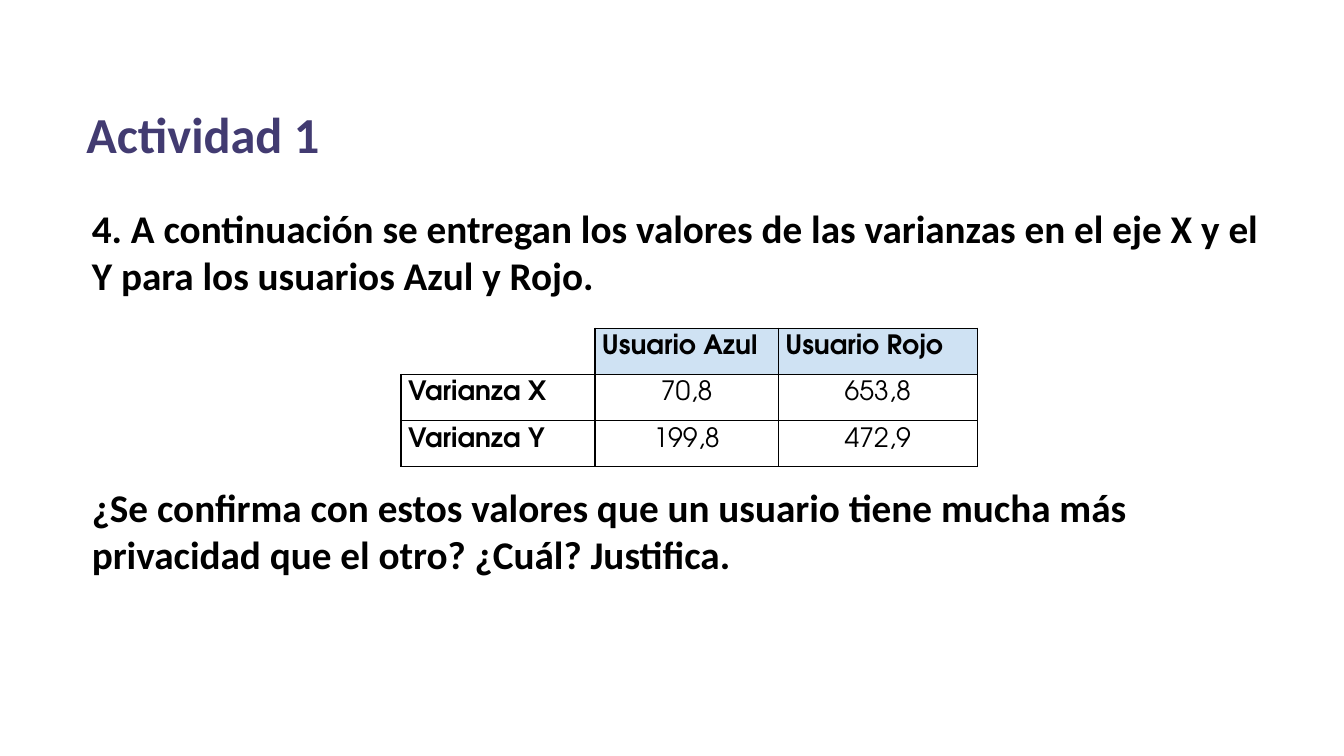
from lxml import etree
from pptx import Presentation
from pptx.dml.color import RGBColor
from pptx.enum.text import MSO_ANCHOR, PP_ALIGN
from pptx.oxml.ns import qn
from pptx.util import Pt

TOP = MSO_ANCHOR.TOP
MIDDLE = MSO_ANCHOR.MIDDLE
LEFT = PP_ALIGN.LEFT
CENTER = PP_ALIGN.CENTER
PURPLE = RGBColor(0x42, 0x3B, 0x71)
BLACK = RGBColor(0, 0, 0)
WHITE = RGBColor(255, 255, 255)
PALE_BLUE = RGBColor(0xCF, 0xE2, 0xF3)
TEXT_FONT = "Calibri"
TABLE_FONT = "TeX Gyre Adventor"

QUESTION = (
    "4. A continuación se entregan los valores de las varianzas en el eje X y el Y "
    "para los usuarios Azul y Rojo.",
    "¿Se confirma con estos valores que un usuario tiene mucha más privacidad "
    "que el otro? ¿Cuál? Justifica.",
)
VARIANCES = (
    ("", "Usuario Azul", "Usuario Rojo"),
    ("Varianza X", "70,8", "653,8"),
    ("Varianza Y", "199,8", "472,9"),
)
COLUMN_WIDTHS = (138.5, 131, 142)
ROW_HEIGHT = 32.9
TABLE_GAP = 132


def write(paragraph, text, size, color, font=TEXT_FONT, bold=True, align=LEFT):
    paragraph.alignment = align
    run = paragraph.add_run()
    run.text = text
    run.font.name = font
    run.font.size = Pt(size)
    run.font.bold = bold
    run.font.color.rgb = color


def set_frame(frame, anchor):
    frame.word_wrap = True
    frame.vertical_anchor = anchor
    frame.margin_left = frame.margin_right = Pt(7.2)
    frame.margin_top = frame.margin_bottom = Pt(3.6)


def add_heading(slide, left, top, width, height):
    heading = slide.shapes.title
    heading.left, heading.top = Pt(left), Pt(top)
    heading.width, heading.height = Pt(width), Pt(height)
    set_frame(heading.text_frame, MIDDLE)
    write(heading.text_frame.paragraphs[0], "Actividad 1", 36, PURPLE)


def add_question(slide, left, top, width, height):
    frame = slide.shapes.add_textbox(Pt(left), Pt(top), Pt(width), Pt(height)).text_frame
    set_frame(frame, TOP)
    introduction, prompt = QUESTION
    write(frame.paragraphs[0], introduction, 28, BLACK)
    closing = frame.add_paragraph()
    closing.space_before = Pt(TABLE_GAP)
    write(closing, prompt, 28, BLACK)


def set_borders(cell, outer_color):
    properties = cell._tc.get_or_add_tcPr()
    sides = (("a:lnL", outer_color), ("a:lnR", BLACK), ("a:lnT", outer_color), ("a:lnB", BLACK))
    for position, (side, color) in enumerate(sides):
        border = etree.Element(qn(side), w=str(Pt(1)))
        fill = etree.SubElement(border, qn("a:solidFill"))
        etree.SubElement(fill, qn("a:srgbClr"), val=str(color))
        properties.insert(position, border)


def add_variances(slide, left, top):
    table = slide.shapes.add_table(
        len(VARIANCES), len(COLUMN_WIDTHS), Pt(left), Pt(top),
        Pt(sum(COLUMN_WIDTHS)), Pt(ROW_HEIGHT * len(VARIANCES)),
    ).table
    for column, width in zip(table.columns, COLUMN_WIDTHS):
        column.width = Pt(width)
    for row_index, values in enumerate(VARIANCES):
        table.rows[row_index].height = Pt(ROW_HEIGHT)
        for column_index, value in enumerate(values):
            cell = table.cell(row_index, column_index)
            cell.margin_left = cell.margin_right = Pt(5)
            cell.margin_top = cell.margin_bottom = Pt(5)
            is_header = row_index == 0 or column_index == 0
            if row_index == 0 and value:
                cell.fill.solid()
                cell.fill.fore_color.rgb = PALE_BLUE
            else:
                cell.fill.background()
            set_borders(cell, BLACK if value else WHITE)
            if value:
                write(cell.text_frame.paragraphs[0], value, 19, BLACK, TABLE_FONT,
                      is_header, LEFT if is_header else CENTER)


def main():
    presentation = Presentation()
    presentation.slide_width, presentation.slide_height = Pt(960), Pt(540)
    slide = presentation.slides.add_slide(presentation.slide_layouts[5])
    add_question(slide, 58.5, 142.5, 851, 276.5)
    add_heading(slide, 54.5, 70, 643, 51)
    add_variances(slide, 286.5, 234.5)
    presentation.save("out.pptx")


if __name__ == "__main__":
    main()
